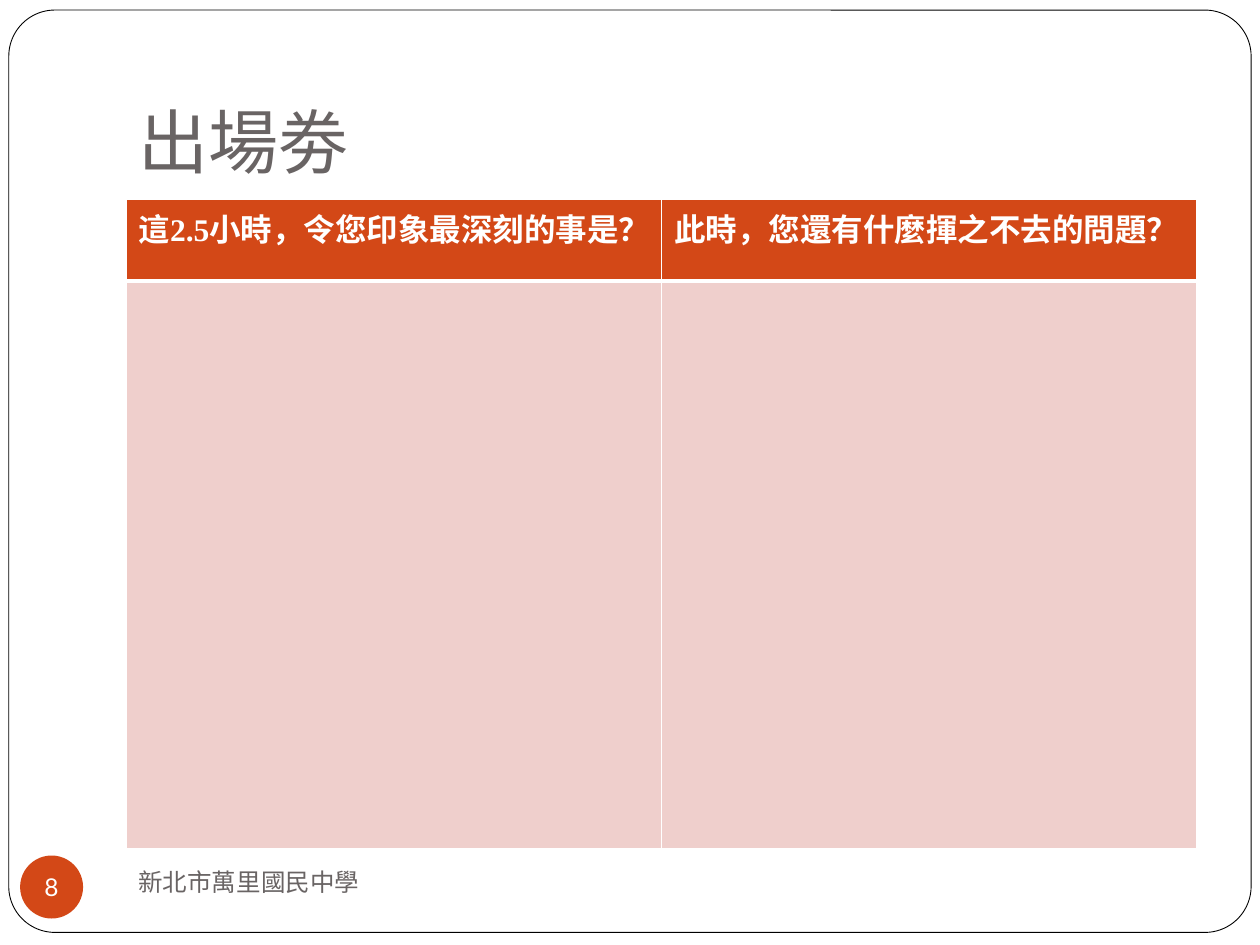
from dataclasses import dataclass
from lxml.etree import SubElement
from pptx import Presentation
from pptx.dml.color import RGBColor
from pptx.enum.shapes import MSO_SHAPE as Preset
from pptx.enum.text import MSO_ANCHOR as Anchor, PP_ALIGN as Align
from pptx.oxml.ns import qn
from pptx.util import Inches, Pt

COLORS = {"white": "FFFFFF", "black": "000000", "gray": "696464",
          "orange": "D34817", "pink": "EFCFCC"}
HEADINGS = ["這2.5小時，令您印象最深刻的事是？", "此時，您還有什麼揮之不去的問題？"]


def color(name):
    return RGBColor.from_string(COLORS[name])


@dataclass
class SlideBuilder:
    """Draws styled elements on the current slide."""
    page: object
    heading_font: str = "Lato"
    body_font: str = "Times New Roman"

    def add_words(self, frame, text, size, ink, font, bold=False, align=Align.LEFT):
        para = frame.paragraphs[0]
        para.alignment = align
        span = para.add_run()
        span.text = text
        span.font.size = Pt(size)
        span.font.name = font
        span.font.bold = bold
        span.font.color.rgb = color(ink)

    def shape(self, preset, box, fill, line=None):
        shape = self.page.shapes.add_shape(preset, *map(Inches, box))
        shape.shadow.inherit = False
        shape.fill.solid()
        shape.fill.fore_color.rgb = color(fill)
        if line:
            shape.line.color.rgb = color(line)
            shape.line.width = Pt(0.5)
        else:
            shape.line.fill.background()
        return shape

    def frame(self, box):
        border = self.shape(Preset.ROUNDED_RECTANGLE, box, "white", "black")
        border.adjustments[0] = 0.05

    def text(self, box, text, size, font, anchor, bottom=0.05):
        frame = self.page.shapes.add_textbox(*map(Inches, box)).text_frame
        frame.word_wrap = True
        frame.vertical_anchor = anchor
        frame.margin_bottom = Inches(bottom)
        self.add_words(frame, text, size, "gray", font)

    def badge(self, box, text):
        frame = self.shape(Preset.OVAL, box, "orange").text_frame
        frame.word_wrap = False
        frame.vertical_anchor = Anchor.MIDDLE
        frame.margin_left = frame.margin_right = 0
        frame.margin_top = frame.margin_bottom = 0
        self.add_words(frame, text, 14, "white", self.heading_font, align=Align.CENTER)

    def borders(self, cell, widths):
        properties = cell._tc.get_or_add_tcPr()
        for index, (side, width) in enumerate(widths.items()):
            line = SubElement(properties, qn(f"a:ln{side}"), w=str(Pt(width)))
            fill = SubElement(line, qn("a:solidFill"))
            SubElement(fill, qn("a:srgbClr"), val=COLORS["white"])
            properties.insert(index, line)

    def table(self, box, headings, heights):
        shape = self.page.shapes.add_table(len(heights), len(headings), *map(Inches, box))
        table = shape.table
        for row, height in zip(table.rows, heights):
            row.height = Inches(height)
        for column, heading in enumerate(headings):
            header, answer = table.cell(0, column), table.cell(1, column)
            self.add_words(header.text_frame, heading, 18, "white", self.body_font, bold=True)
            for cell, fill, top, bottom in ((header, "orange", 1, 3), (answer, "pink", 3, 1)):
                cell.fill.solid()
                cell.fill.fore_color.rgb = color(fill)
                self.borders(cell, {"L": 1, "R": 1, "T": top, "B": bottom})


def main():
    deck = Presentation()
    deck.slide_width, deck.slide_height = Inches(10), Inches(7.5)
    builder = SlideBuilder(deck.slides.add_slide(deck.slide_layouts[6]))
    builder.frame((0.07, 0.08, 9.86, 7.32))
    builder.text((1, 0.3, 8.5, 1.25), "出場劵", 40, builder.heading_font, Anchor.BOTTOM, 0.1)
    builder.text((1, 6.75, 4.33, 0.5), "新北市萬里國民中學", 14, builder.body_font, Anchor.MIDDLE)
    builder.badge((0.16, 6.79, 0.5, 0.5), "8")
    builder.table((1, 1.58, 8.5, 5.16), HEADINGS, (0.65, 4.51))
    deck.save("out.pptx")


if __name__ == "__main__":
    main()
